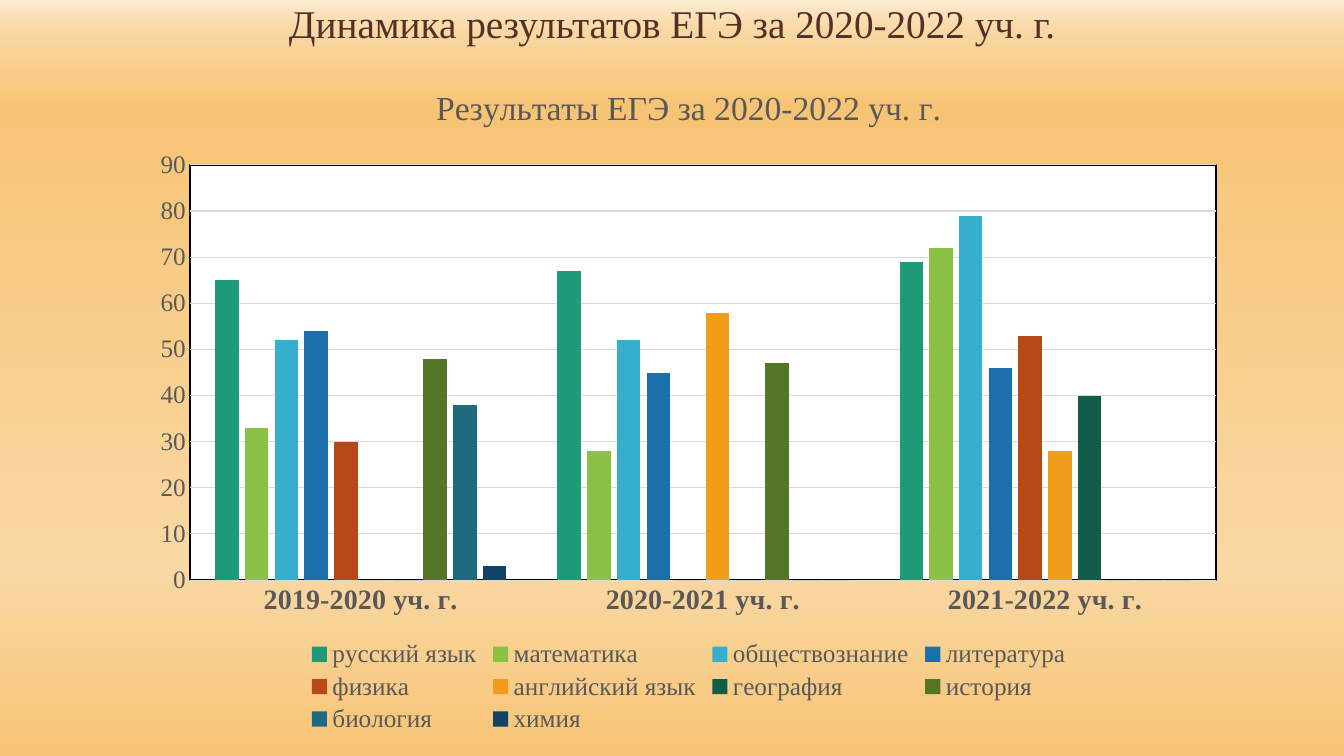
from lxml import etree
from pptx import Presentation
from pptx.chart.data import CategoryChartData
from pptx.dml.color import RGBColor
from pptx.enum.chart import XL_CHART_TYPE, XL_LEGEND_POSITION, XL_TICK_MARK
from pptx.enum.text import PP_ALIGN
from pptx.oxml import parse_xml
from pptx.oxml.ns import nsdecls, qn
from pptx.util import Inches, Pt

COLUMNS = XL_CHART_TYPE.COLUMN_CLUSTERED
BOTTOM = XL_LEGEND_POSITION.BOTTOM
NO_TICK = XL_TICK_MARK.NONE
CENTER = PP_ALIGN.CENTER

FONT = "Times New Roman"
COLORS = {
    "heading": "523227", "heading_edge": "271E18", "label": "595959",
    "grid": "D9D9D9", "plot": "FFFFFF", "frame": "000000",
}
BACKGROUND_STOPS = [(0, "FCEBD1"), (4, "FAD8A3"), (14, "F7C475"), (75, "F9D8A3"), (100, "F7C475")]
HEADING = "Динамика результатов ЕГЭ за 2020-2022 уч. г."
CHART_TITLE = "Результаты ЕГЭ за 2020-2022 уч. г."
YEARS = ["2019-2020 уч. г.", "2020-2021 уч. г.", "2021-2022 уч. г."]
SUBJECTS = [
    ("русский язык", (65, 67, 69), "1D9A78"),
    ("математика", (33, 28, 72), "8BC145"),
    ("обществознание", (52, 52, 79), "36AFCE"),
    ("литература", (54, 45, 46), "1D6FA9"),
    ("физика", (30, 0, 53), "B74919"),
    ("английский язык", (0, 58, 28), "F19D19"),
    ("география", (0, 0, 40), "115C48"),
    ("история", (48, 47, 0), "547627"),
    ("биология", (38, 0, 0), "1F6A7D"),
    ("химия", (3, 0, 0), "114365"),
]
CHART_BOX = (1.38, 0.61, 10.9, 6.71)
PLOT_BOX = {"x": 0.046, "y": 0.153, "w": 0.934, "h": 0.614}


def style_font(font, size, color, bold=False):
    """Apply the slide typeface with a size, colour and weight."""
    font.name = FONT
    font.size = Pt(size)
    font.bold = bold
    font.color.rgb = RGBColor.from_string(color)


def paint_background(slide):
    """Fill the slide with the vertical multi-stop gradient."""
    fill = slide.background.fill
    fill.gradient()
    fill.gradient_angle = 270
    stops = slide.background._cSld.find(".//" + qn("a:gsLst"))
    stops.clear()
    for percent, color in BACKGROUND_STOPS:
        stop = etree.SubElement(stops, qn("a:gs"), pos=str(percent * 1000))
        etree.SubElement(stop, qn("a:srgbClr"), val=color)


def add_heading(slide, width, height):
    """Add the slide heading across the top."""
    frame = slide.shapes.add_textbox(0, 0, width, height).text_frame
    frame.word_wrap = True
    frame.text = HEADING
    paragraph = frame.paragraphs[0]
    paragraph.alignment = CENTER
    paragraph.line_spacing = 0.9
    paragraph.space_before = Pt(10)
    run = paragraph.runs[0]
    style_font(run.font, 28, COLORS["heading"])
    run._r.get_or_add_rPr().insert(0, parse_xml(
        f'<a:ln {nsdecls("a")} w="{Pt(0.15)}"><a:solidFill>'
        f'<a:srgbClr val="{COLORS["heading_edge"]}"/></a:solidFill></a:ln>'))


def frame_plot(chart):
    """Place the plot area and give it a white fill and black frame."""
    plot_area = chart._chartSpace.chart.plotArea
    for layout in plot_area.findall(qn("c:layout")):
        plot_area.remove(layout)
    sides = "".join(f'<c:{side}Mode val="edge"/>' for side in "xy")
    sides += "".join(f'<c:{side} val="{share}"/>' for side, share in PLOT_BOX.items())
    plot_area.insert(0, parse_xml(
        f'<c:layout {nsdecls("c")}><c:manualLayout><c:layoutTarget val="inner"/>'
        f'{sides}</c:manualLayout></c:layout>'))
    plot_area.append(parse_xml(
        f'<c:spPr {nsdecls("c", "a")}><a:solidFill><a:srgbClr val="{COLORS["plot"]}"/></a:solidFill>'
        f'<a:ln w="{Pt(1.5)}"><a:solidFill><a:srgbClr val="{COLORS["frame"]}"/></a:solidFill></a:ln></c:spPr>'))


def add_results_chart(slide):
    """Add the column chart of exam results by subject and year."""
    results = CategoryChartData()
    results.categories = YEARS
    for subject, scores, _ in SUBJECTS:
        results.add_series(subject, scores)
    chart = slide.shapes.add_chart(COLUMNS, *map(Inches, CHART_BOX), results).chart
    style_font(chart.font, 18, COLORS["label"])

    chart.has_title = True
    chart.chart_title.text_frame.text = CHART_TITLE
    title_run = chart.chart_title.text_frame.paragraphs[0].runs[0]
    style_font(title_run.font, 24, COLORS["label"])
    chart.chart_title.include_in_layout = False

    chart.has_legend = True
    chart.legend.position = BOTTOM
    chart.legend.include_in_layout = False
    style_font(chart.legend.font, 18, COLORS["label"])

    years, scale = chart.category_axis, chart.value_axis
    for axis, size, bold in ((years, 20, True), (scale, 18, False)):
        axis.major_tick_mark = axis.minor_tick_mark = NO_TICK
        style_font(axis.tick_labels.font, size, COLORS["label"], bold)
    scale.minimum_scale, scale.maximum_scale, scale.major_unit = 0, 90, 10
    scale.has_major_gridlines = True
    scale.format.line.fill.background()
    for line in (years.format.line, scale.major_gridlines.format.line):
        line.width = Pt(0.75)
        line.color.rgb = RGBColor.from_string(COLORS["grid"])

    plot = chart.plots[0]
    plot.gap_width, plot.overlap, plot.vary_by_categories = 219, -27, False
    for series, (_, _, color) in zip(plot.series, SUBJECTS):
        series.format.fill.solid()
        series.format.fill.fore_color.rgb = RGBColor.from_string(color)
    frame_plot(chart)


def main():
    """Build and save the exam results slide."""
    deck = Presentation()
    deck.slide_width, deck.slide_height = Inches(13.33), Inches(7.5)
    slide = deck.slides.add_slide(deck.slide_layouts[6])
    paint_background(slide)
    add_heading(slide, deck.slide_width, deck.slide_height)
    add_results_chart(slide)
    deck.save("out.pptx")


if __name__ == "__main__":
    main()
